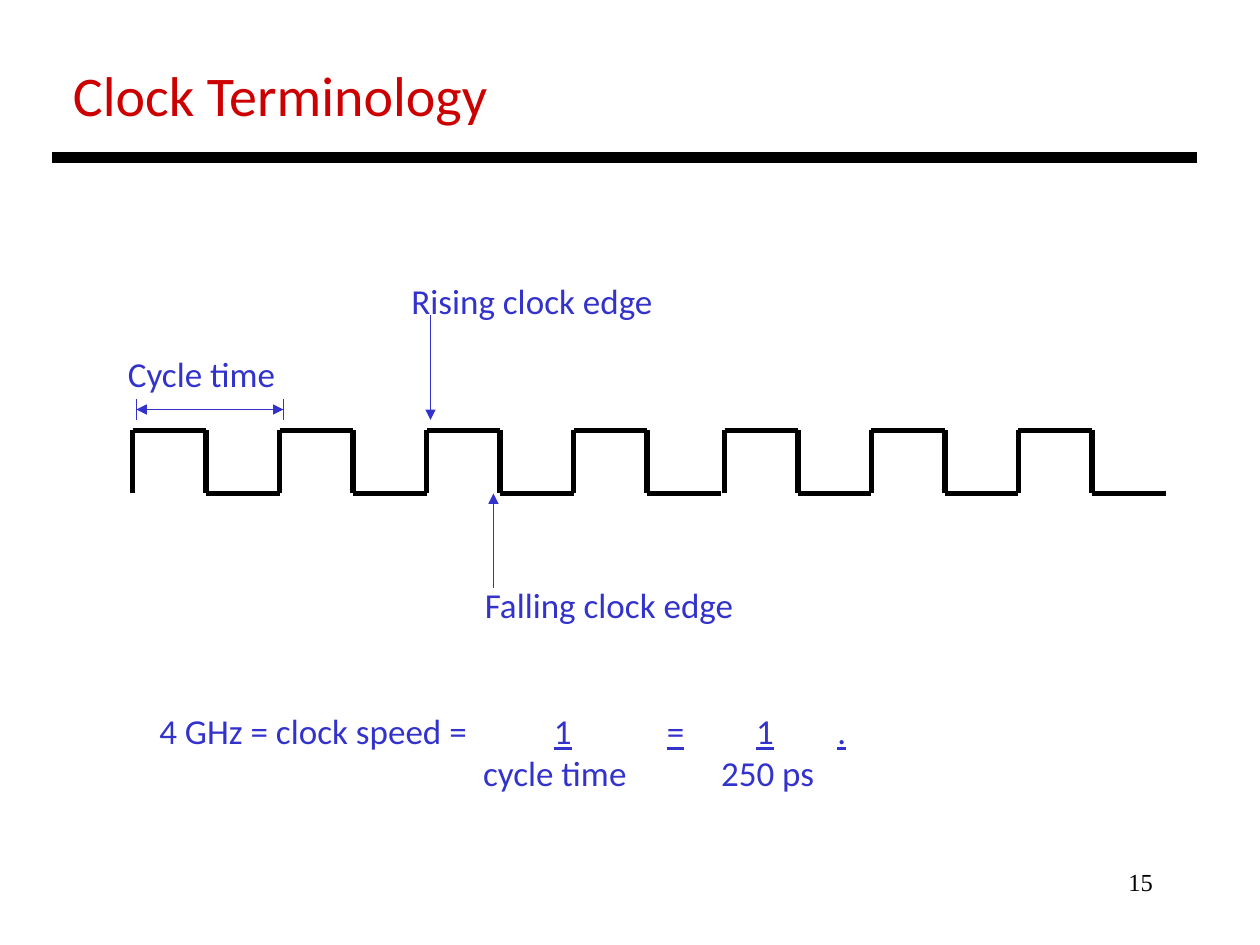
from lxml import etree
from pptx import Presentation
from pptx.dml.color import RGBColor
from pptx.enum.shapes import MSO_CONNECTOR
from pptx.enum.text import MSO_ANCHOR, MSO_AUTO_SIZE, PP_ALIGN
from pptx.oxml.ns import qn
from pptx.util import Pt

STRAIGHT = MSO_CONNECTOR.STRAIGHT
TOP = MSO_ANCHOR.TOP
LEFT, RIGHT = PP_ALIGN.LEFT, PP_ALIGN.RIGHT
NO_AUTOFIT = MSO_AUTO_SIZE.NONE

BLACK = RGBColor(0x00, 0x00, 0x00)
RED = RGBColor(0xCC, 0x00, 0x00)
BLUE = RGBColor(0x33, 0x33, 0xCC)
TITLE_ONLY = 5


def format_runs(paragraph, size, color, font="Calibri"):
    for run in paragraph.runs:
        run.font.name = font
        run.font.size = Pt(size)
        run.font.color.rgb = color


def add_line(slide, start, end, color, width, head=False, tail=False):
    """Draw a straight line; head and tail put arrowheads at start and end."""
    line = slide.shapes.add_connector(STRAIGHT, *map(Pt, (*start, *end)))
    line.line.color.rgb = color
    line.line.width = Pt(width)
    outline = line.line._get_or_add_ln()
    for wanted, tag in ((head, "a:headEnd"), (tail, "a:tailEnd")):
        if wanted:
            etree.SubElement(outline, qn(tag), type="triangle")
    etree.SubElement(line._element.spPr, qn("a:effectLst"))


def add_text_box(slide, left, top, width, height):
    box = slide.shapes.add_textbox(Pt(left), Pt(top), Pt(width), Pt(height))
    box.text_frame.auto_size = NO_AUTOFIT
    box.text_frame.word_wrap = False
    return box.text_frame


def add_label(slide, text, left, top, width):
    frame = add_text_box(slide, left, top, width, 31.5)
    frame.text = text
    format_runs(frame.paragraphs[0], 20, BLUE)


def add_title(slide, text, left, top, width, height):
    title = slide.shapes.title
    title.left, title.top = Pt(left), Pt(top)
    title.width, title.height = Pt(width), Pt(height)
    frame = title.text_frame
    frame.text = text
    frame.word_wrap = False
    frame.auto_size = NO_AUTOFIT
    frame.vertical_anchor = TOP
    frame.paragraphs[0].alignment = LEFT
    format_runs(frame.paragraphs[0], 32, RED)
    add_line(slide, (30, 90), (684, 90), BLACK, 6)


def add_clock_wave(slide, left, top, cycles, half=42, height=36):
    """Draw each cycle as rising edge, high level, falling edge, low level."""
    bottom = top + height
    for cycle in range(cycles):
        start = left + 2 * half * cycle
        middle, end = start + half, start + 2 * half
        corners = [(start, bottom), (start, top), (middle, top),
                   (middle, bottom), (end, bottom)]
        for first, second in zip(corners, corners[1:]):
            add_line(slide, first, second, BLACK, 3)


def add_cycle_time(slide, left, top, width):
    add_label(slide, "Cycle time", left - 12, top - 30, 100)
    for x in (left, left + width):
        add_line(slide, (x, top), (x, top + 12), BLUE, 0.75)
    add_line(slide, (left, top + 6), (left + width, top + 6), BLUE, 0.75,
             head=True, tail=True)


def add_edge_labels(slide):
    add_line(slide, (246, 180), (246, 240), BLUE, 0.75, tail=True)
    add_label(slide, "Rising clock edge", 228, 156, 154)
    add_label(slide, "Falling clock edge", 270, 330, 158)
    add_line(slide, (282, 336), (282, 282), BLUE, 0.75, tail=True)


def set_tab_stops(paragraph, positions):
    tab_list = etree.SubElement(paragraph._p.get_or_add_pPr(), qn("a:tabLst"))
    for position in positions:
        etree.SubElement(tab_list, qn("a:tab"), pos=str(Pt(position)), algn="l")


def add_clock_speed(slide, left, top, width, height):
    """Write the two fractions: underlined numerators above denominators."""
    frame = add_text_box(slide, left, top, width, height)
    numerators = frame.paragraphs[0]
    pieces = [("4 GHz = clock speed = ", False), ("\t1\t=", True),
              ("\t", False), ("\t1\t.", True)]
    for text, underlined in pieces:
        run = numerators.add_run()
        run.text = text
        run.font.underline = underlined
    set_tab_stops(numerators, (225.5, 290, 309, 341, 387.5))

    denominators = frame.add_paragraph()
    denominators.add_run().text = "\tcycle time\t250 ps"
    set_tab_stops(denominators, (185, 321))
    for paragraph in frame.paragraphs:
        format_runs(paragraph, 20, BLUE)


def add_page_number(slide, number, left, top, width, height):
    frame = add_text_box(slide, left, top, width, height)
    frame.word_wrap = True
    frame.text = number
    frame.paragraphs[0].alignment = RIGHT
    format_runs(frame.paragraphs[0], 14, BLACK, "Times New Roman")


def main():
    presentation = Presentation()
    presentation.slide_width, presentation.slide_height = Pt(720), Pt(540)
    slide = presentation.slides.add_slide(presentation.slide_layouts[TITLE_ONLY])
    add_page_number(slide, "15", 516, 492, 150, 36)
    add_title(slide, "Clock Terminology", 34.5, 31, 254, 46)
    add_clock_wave(slide, 75.75, 246, cycles=4)
    add_clock_wave(slide, 414, 246, cycles=3)
    add_cycle_time(slide, 78, 228, 84)
    add_edge_labels(slide)
    add_clock_speed(slide, 84, 402, 410, 55.5)
    presentation.save("out.pptx")


if __name__ == "__main__":
    main()
